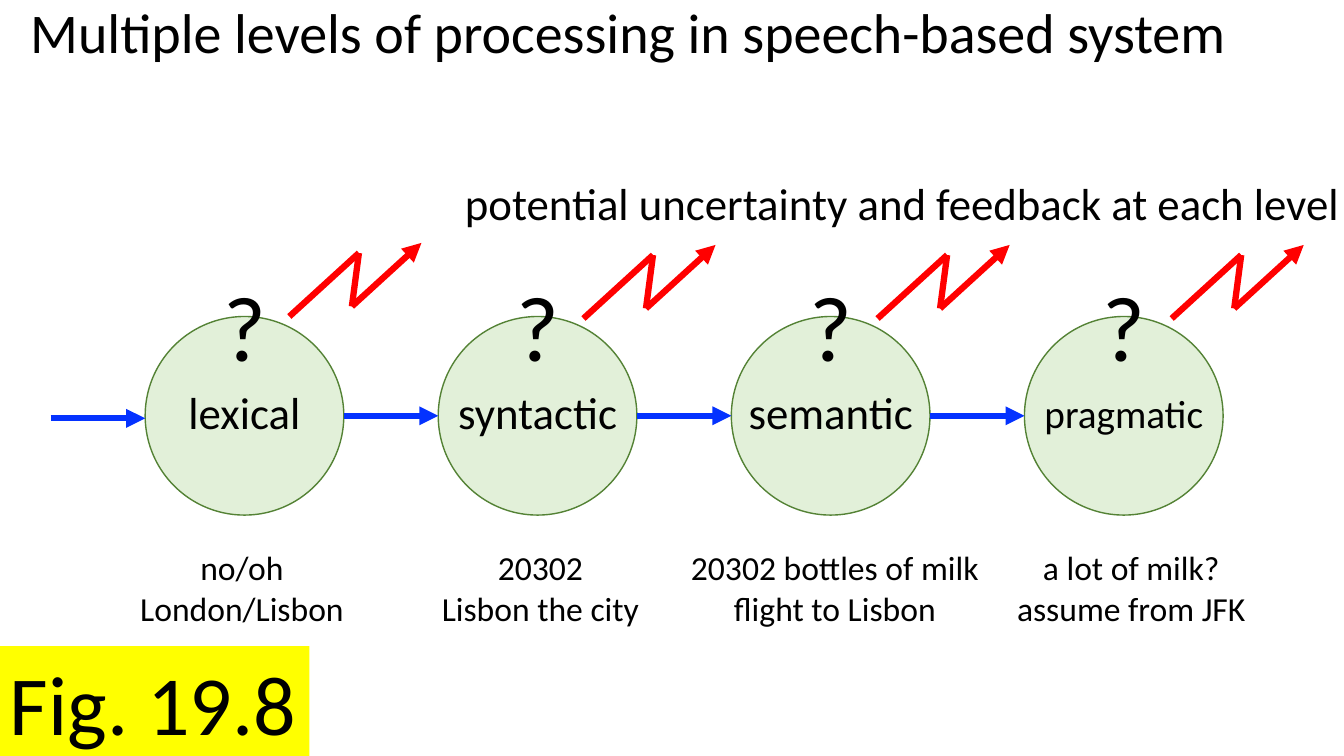
from pptx import Presentation
from pptx.dml.color import RGBColor
from pptx.enum.shapes import MSO_CONNECTOR, MSO_SHAPE
from pptx.enum.text import MSO_ANCHOR, PP_ALIGN
from pptx.oxml.ns import qn
from pptx.util import Inches, Pt
from lxml.etree import SubElement

# Content
TITLE = "Multiple levels of processing in speech-based system"
FEEDBACK = "potential uncertainty and feedback at each level"
FIGURE = "Fig. 19.8"
LEVELS = [  # name, size, label centre y, caption, caption centre x, zigzag top
    ("lexical", 32, 4.08, "no/oh\nLondon/Lisbon", 2.4, 2.41),
    ("syntactic", 32, 4.08, "20302\nLisbon the city", 5.36, 2.43),
    ("semantic", 32, 4.08, "20302 bottles of milk\nflight to Lisbon", 8.28, 2.43),
    ("pragmatic", 28, 4.1, "a lot of milk?\nassume from JFK", 11.22, 2.43),
]

# Style
FONT = "Calibri"
BLACK = RGBColor(0, 0, 0)
PALE_GREEN = RGBColor(0xE2, 0xF0, 0xD9)
GREEN = RGBColor(0x54, 0x82, 0x35)
BLUE = RGBColor(0x04, 0x32, 0xFF)
RED = RGBColor(0xFF, 0, 0)
YELLOW = RGBColor(0xFF, 0xFF, 0)

# Grid, in inches
WIDTH, HEIGHT = 13.33, 7.5
FIRST_X, PITCH, DIAMETER, CIRCLE_TOP = 1.44, 2.907, 1.97, 3.14
GAP = PITCH - DIAMETER
ARROW_Y = CIRCLE_TOP + DIAMETER / 2
ZIGZAG_X, ZIGZAG_PITCH = 2.87, 2.917
ZIGZAG = [(0, 0.73), (0.69, 0.1), (0.62, 0.63), (1.31, 0)]

prs = Presentation()
prs.slide_width, prs.slide_height = Inches(WIDTH), Inches(HEIGHT)
s = prs.slides.add_slide(prs.slide_layouts[5])


def place(sp, x, y, w, h):
    sp.left, sp.top, sp.width, sp.height = (Inches(v) for v in (x, y, w, h))


def write(sp, text, size, align=PP_ALIGN.CENTER, anchor=MSO_ANCHOR.MIDDLE):
    tf = sp.text_frame
    tf.vertical_anchor = anchor
    p = tf.paragraphs[0]
    p.text, p.alignment = text, align
    p.font.name, p.font.size, p.font.color.rgb = FONT, Pt(size), BLACK
    return p


def add_label(text, size, cx, cy, w, h):
    sp = s.shapes.add_textbox(*(Inches(v) for v in (cx - w / 2, cy - h / 2, w, h)))
    sp.text_frame.word_wrap = False
    write(sp, text, size)


def add_filled(kind, fill, x, y, w, h):
    sp = s.shapes.add_shape(kind, *(Inches(v) for v in (x, y, w, h)))
    sp.shadow.inherit = False
    sp.fill.solid()
    sp.fill.fore_color.rgb = fill
    return sp


def add_line(start, end, color, arrow):
    c = s.shapes.add_connector(MSO_CONNECTOR.STRAIGHT,
                               *(Inches(v) for v in (*start, *end)))
    c.line.color.rgb, c.line.width = color, Pt(4.5)
    if arrow:
        SubElement(c.line._get_or_add_ln(), qn("a:tailEnd"), type="triangle")
    SubElement(c._element.spPr, qn("a:effectLst"))


# Title
title = s.shapes.title
place(title, 0.2, 0, 12.93, 1.78)
write(title, TITLE, 40, PP_ALIGN.LEFT, MSO_ANCHOR.TOP).line_spacing = 0.9

# Processing levels
for i, (name, size, name_y, caption, caption_x, zigzag_top) in enumerate(LEVELS):
    x = FIRST_X + i * PITCH
    cx = x + DIAMETER / 2
    circle = add_filled(MSO_SHAPE.OVAL, PALE_GREEN, x, CIRCLE_TOP, DIAMETER, DIAMETER)
    circle.line.color.rgb, circle.line.width = GREEN, Pt(1)
    add_label(name, size, cx, name_y, 1.85, 0.64)
    add_label("?", 66, cx, 3.22, 0.63, 1.21)
    add_label(caption, 24, caption_x, 5.83, 3.08, 0.91)

    # Incoming arrow; the one from outside sits slightly lower
    y = ARROW_Y if i else 4.15
    add_line((x - GAP, y), (x, y), BLUE, True)

    # Feedback zigzag
    points = [(ZIGZAG_X + i * ZIGZAG_PITCH + dx, zigzag_top + dy) for dx, dy in ZIGZAG]
    for start, end in zip(points, points[1:]):
        add_line(start, end, RED, end == points[-1])

add_label(FEEDBACK, 32, 8.95, 2.01, 8.97, 0.64)

# Figure number
tag = add_filled(MSO_SHAPE.RECTANGLE, YELLOW, 0, 6.41, 3.07, 1.11)
tag.line.fill.background()
tag.text_frame.word_wrap = False
write(tag, FIGURE, 60, PP_ALIGN.LEFT)

prs.save("out.pptx")
